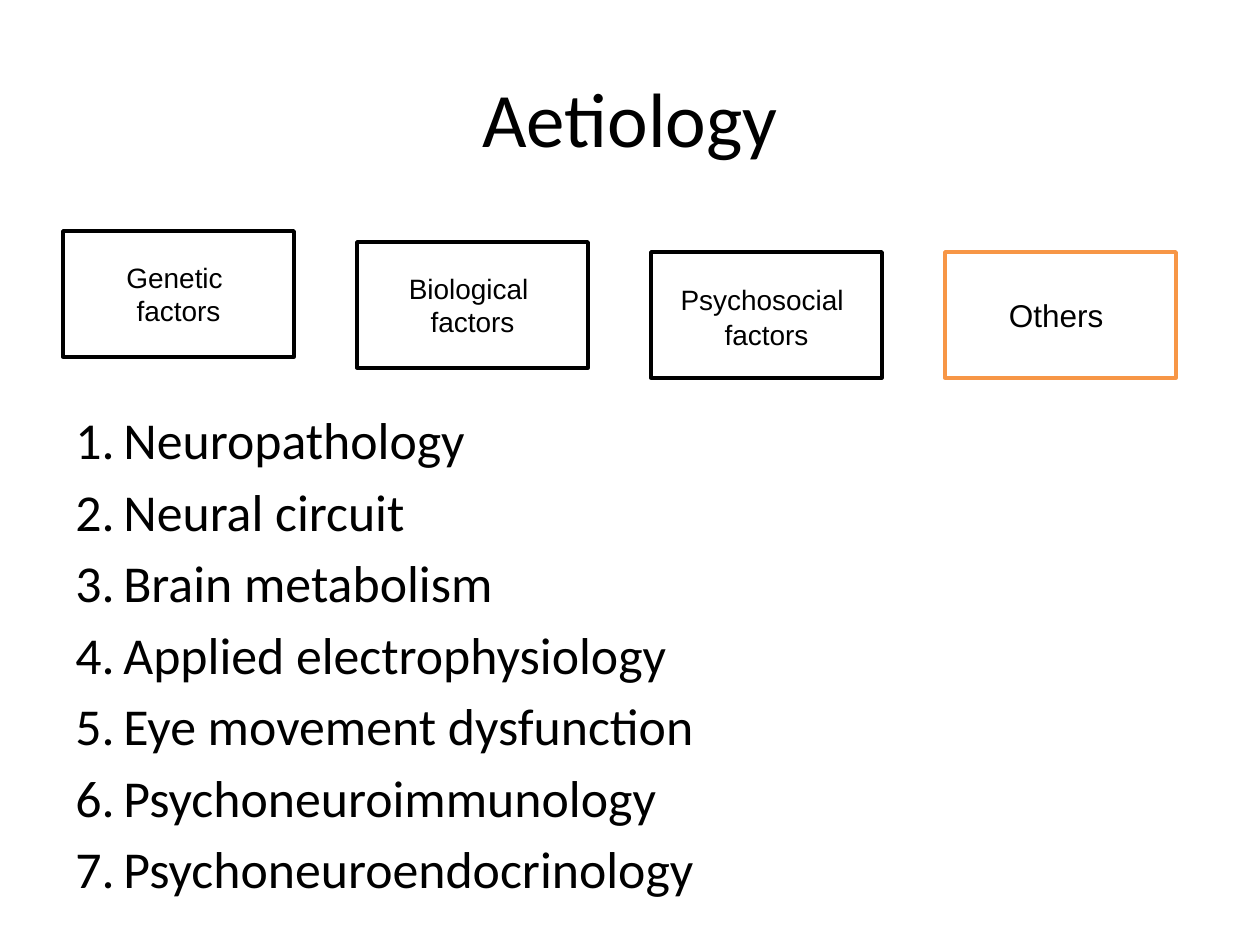
from pptx import Presentation
from pptx.dml.color import RGBColor
from pptx.enum.shapes import MSO_SHAPE as Shape
from pptx.enum.text import MSO_ANCHOR as Anchor, PP_ALIGN as Align
from pptx.oxml.xmlchemy import OxmlElement as Element
from pptx.util import Pt

PX = 914400 // 126
BLACK = RGBColor(0x00, 0x00, 0x00)
WHITE = RGBColor(0xFF, 0xFF, 0xFF)
ORANGE = RGBColor(0xF7, 0x96, 0x46)

TITLE = "Aetiology"
FACTORS = [
    (231, BLACK, [[("Genetic ", 16)], [("factors", 16)]]),
    (242, BLACK, [[("Biological ", 16)], [("factors", 16)]]),
    (252, BLACK, [[("Psychosocial", 16), (" ", 18)], [("factors", 16)]]),
    (252, ORANGE, [[("Others ", 18)]]),
]
TOPICS = [
    "Neuropathology",
    "Neural circuit",
    "Brain metabolism",
    "Applied electrophysiology",
    "Eye movement dysfunction",
    "Psychoneuroimmunology",
    "Psychoneuroendocrinology",
]
LEFT, STEP, WIDE, HIGH = 63, 294, 231, 126
INDENT = 48


def style(font, name, size):
    font.name = name
    font.size = Pt(size)
    font.color.rgb = BLACK


def add_text(slide, *area):
    frame = slide.shapes.add_textbox(*(n * PX for n in area)).text_frame
    frame.word_wrap = True
    return frame


def add_title(slide):
    frame = add_text(slide, LEFT, 38, 1134, 158)
    frame.vertical_anchor = Anchor.MIDDLE
    frame.text = TITLE
    para = frame.paragraphs[0]
    para.alignment = Align.CENTER
    style(para.runs[0].font, "Calibri", 44)


def add_topics(slide):
    frame = add_text(slide, LEFT, 402, 1134, 445)
    frame.text = "\n".join(TOPICS)
    for i, para in enumerate(frame.paragraphs):
        props = para._p.get_or_add_pPr()
        props.set("marL", str(INDENT * PX))
        props.set("indent", str(-INDENT * PX))
        mark = Element("a:buAutoNum")
        mark.set("type", "arabicPeriod")
        props.append(mark)
        if i:
            para.space_before = Pt(5.3)
        style(para.runs[0].font, "Calibri", 29.6)


def add_factor(slide, left, top, color, lines):
    area = (left, top, WIDE, HIGH)
    box = slide.shapes.add_shape(Shape.RECTANGLE, *(n * PX for n in area))
    box.shadow.inherit = False
    box.fill.solid()
    box.fill.fore_color.rgb = WHITE
    box.line.color.rgb = color
    box.line.width = Pt(2)
    frame = box.text_frame
    frame.word_wrap = False
    frame.vertical_anchor = Anchor.MIDDLE
    for i, parts in enumerate(lines):
        para = frame.add_paragraph() if i else frame.paragraphs[0]
        para.alignment = Align.CENTER
        for text, size in parts:
            run = para.add_run()
            run.text = text
            style(run.font, "Arial", size)


def main():
    deck = Presentation()
    deck.slide_width, deck.slide_height = 1260 * PX, 945 * PX
    slide = deck.slides.add_slide(deck.slide_layouts[6])
    add_title(slide)
    add_topics(slide)
    for i, (top, color, lines) in enumerate(FACTORS):
        add_factor(slide, LEFT + i * STEP, top, color, lines)
    deck.save("out.pptx")


if __name__ == "__main__":
    main()
